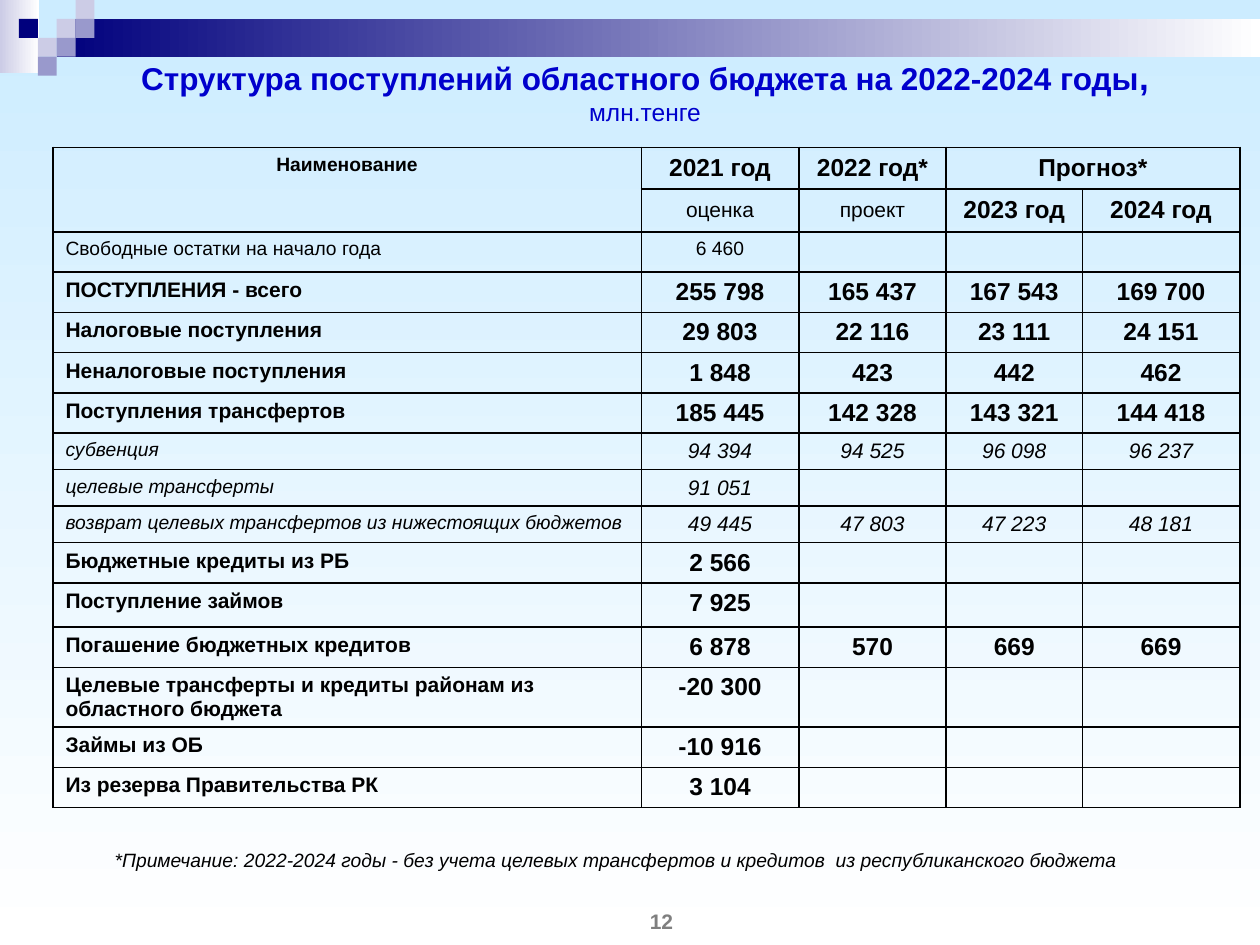
import pptx
import pptx.dml.color
import pptx.enum.shapes
import pptx.enum.text
import pptx.util
from lxml import etree

Inches = pptx.util.Inches
Pt = pptx.util.Pt
RGB = pptx.dml.color.RGBColor
ALIGN = pptx.enum.text.PP_ALIGN
ANCHOR = pptx.enum.text.MSO_ANCHOR

SKY = RGB(0xCC, 0xEC, 0xFF)
WHITE = RGB(0xFF, 0xFF, 0xFF)
BLACK = RGB(0, 0, 0)
GREY = RGB(0x7F, 0x7F, 0x7F)
TITLE_BLUE = RGB(0, 0, 0xCC)
NAVY = RGB(0, 0, 0x7D)
LILAC = RGB(0xCC, 0xCC, 0xE6)
VIOLET = RGB(0x99, 0x99, 0xCC)

FONT = "Arial"
UNIT = 0.15  # side of one decorative square
COLUMNS = [4.67, 1.25, 1.17, 1.08, 1.25]
HEADER_HEIGHTS = [0.33, 0.34]

# row kind: label size, value size, bold, italic, height
KINDS = {
    "plain": (11, 11, False, False, 0.32),
    "total": (12, 14, True, False, 0.32),
    "loan": (12, 14, True, False, 0.35),
    "double": (12, 14, True, False, 0.47),
    "detail": (11, 12, False, True, 0.29),
}
BUDGET = [
    ("plain", "Свободные остатки на начало года", "6 460"),
    ("total", "ПОСТУПЛЕНИЯ - всего", "255 798", "165 437", "167 543", "169 700"),
    ("total", "Налоговые поступления", "29 803", "22 116", "23 111", "24 151"),
    ("total", "Неналоговые поступления", "1 848", "423", "442", "462"),
    ("total", "Поступления трансфертов", "185 445", "142 328", "143 321", "144 418"),
    ("detail", "субвенция", "94 394", "94 525", "96 098", "96 237"),
    ("detail", "целевые трансферты", "91 051"),
    ("detail", "возврат целевых трансфертов из нижестоящих бюджетов",
     "49 445", "47 803", "47 223", "48 181"),
    ("total", "Бюджетные кредиты из РБ", "2 566"),
    ("loan", "Поступление займов", "7 925"),
    ("total", "Погашение бюджетных кредитов", "6 878", "570", "669", "669"),
    ("double", "Целевые трансферты и кредиты районам из областного бюджета", "-20 300"),
    ("total", "Займы из ОБ", "-10 916"),
    ("total", "Из резерва Правительства РК", "3 104"),
]


def write(paragraph, text, size=12, color=BLACK, bold=False, italic=False, align=ALIGN.CENTER):
    paragraph.alignment = align
    run = paragraph.add_run()
    run.text = text
    font = run.font
    font.name, font.size, font.bold, font.italic = FONT, Pt(size), bold, italic
    font.color.rgb = color


def shade(fill, start, end, angle):
    fill.gradient()
    fill.gradient_angle = angle
    for stop, color in zip(fill.gradient_stops, (start, end)):
        stop.color.rgb = color


def add_block(slide, left, top, width, height):
    block = slide.shapes.add_shape(pptx.enum.shapes.MSO_SHAPE.RECTANGLE,
                                   Inches(left), Inches(top), Inches(width), Inches(height))
    block.shadow.inherit = False
    block.line.fill.background()
    return block


def add_ornament(slide):
    shade(add_block(slide, 0, 0, 0.31, 0.58).fill, LILAC, WHITE, 0)
    shade(add_block(slide, 3 * UNIT, UNIT, 10 - 3 * UNIT, 2 * UNIT).fill, NAVY, WHITE, 0)
    squares = {LILAC: [(3, 1), (4, 0), (2, 2)],
               VIOLET: [(4, 1), (3, 2), (2, 3)],
               NAVY: [(1, 1)]}
    for color, places in squares.items():
        for column, row in places:
            square = add_block(slide, column * UNIT, row * UNIT, UNIT, UNIT)
            square.fill.solid()
            square.fill.fore_color.rgb = color


def add_title(slide):
    title = slide.shapes.title
    title.left, title.top, title.width, title.height = map(Inches, (0.58, 0.44, 9.08, 0.56))
    frame = title.text_frame
    frame.auto_size = pptx.enum.text.MSO_AUTO_SIZE.NONE
    frame.vertical_anchor = ANCHOR.MIDDLE
    heading = frame.paragraphs[0]
    write(heading, "Структура поступлений областного бюджета на 2022-2024 годы",
          size=18, color=TITLE_BLUE, bold=True)
    write(heading, ",", size=20, color=TITLE_BLUE, bold=True)
    heading.add_line_break()
    write(heading, "млн.тенге", size=14, color=TITLE_BLUE)


def add_borders(cell):
    properties = cell._tc.get_or_add_tcPr()
    for position, side in enumerate(("lnL", "lnR", "lnT", "lnB")):
        border = etree.fromstring(
            f'<a:{side} xmlns:a="http://schemas.openxmlformats.org/drawingml/2006/main" w="12700">'
            f'<a:solidFill><a:srgbClr val="{BLACK}"/></a:solidFill></a:{side}>')
        properties.insert(position, border)


def fill_cell(cell, text, size, anchor=ANCHOR.TOP, **style):
    cell.vertical_anchor = anchor
    paragraph = cell.text_frame.paragraphs[0]
    if text:
        write(paragraph, text, size=size, **style)
    else:  # keeps an empty cell from stretching its row
        end = etree.SubElement(paragraph._p, pptx.oxml.ns.qn("a:endParaRPr"))
        end.set("sz", str(size * 100))


def add_header(table):
    years = ["2021 год", "2022 год*", "Прогноз*"]
    stages = [("оценка", 12, False), ("проект", 12, False),
              ("2023 год", 14, True), ("2024 год", 14, True)]
    fill_cell(table.cell(0, 0), "Наименование", 11, bold=True)
    for column, year in enumerate(years, 1):
        fill_cell(table.cell(0, column), year, 14, bold=True)
    for column, (stage, size, bold) in enumerate(stages, 1):
        fill_cell(table.cell(1, column), stage, size, ANCHOR.MIDDLE, bold=bold)
    table.cell(0, 0).merge(table.cell(1, 0))
    table.cell(0, 3).merge(table.cell(0, 4))


def add_budget_table(slide):
    heights = HEADER_HEIGHTS + [KINDS[entry[0]][-1] for entry in BUDGET]
    table = slide.shapes.add_table(len(heights), len(COLUMNS), Inches(0.42), Inches(1.17),
                                   Inches(sum(COLUMNS)), Inches(sum(heights))).table
    table.first_row = table.horz_banding = False
    for column, width in zip(table.columns, COLUMNS):
        column.width = Inches(width)
    for row, height in zip(table.rows, heights):
        row.height = Inches(height)
    for cell in table.iter_cells():
        cell.fill.background()
        add_borders(cell)
    add_header(table)
    for row, (kind, label, *values) in enumerate(BUDGET, len(HEADER_HEIGHTS)):
        label_size, value_size, bold, italic, _ = KINDS[kind]
        fill_cell(table.cell(row, 0), label, label_size,
                  bold=bold, italic=italic, align=ALIGN.LEFT)
        for column in range(1, len(COLUMNS)):
            value = values[column - 1] if column <= len(values) else ""
            fill_cell(table.cell(row, column), value, value_size if value else 11,
                      bold=bold, italic=italic)


def add_caption(slide, box, text, **style):
    frame = slide.shapes.add_textbox(*map(Inches, box)).text_frame
    frame.word_wrap = True
    frame.vertical_anchor = ANCHOR.MIDDLE
    frame.margin_left = frame.margin_right = frame.margin_top = frame.margin_bottom = 0
    write(frame.paragraphs[0], text, **style)


def main():
    deck = pptx.Presentation()
    deck.slide_width, deck.slide_height = Inches(10), Inches(7.5)
    slide = deck.slides.add_slide(deck.slide_layouts[5])
    shade(slide.background.fill, SKY, WHITE, 270)
    add_ornament(slide)
    add_title(slide)
    add_budget_table(slide)
    add_caption(slide, (0.91, 6.73, 8.34, 0.18),
                "*Примечание: 2022-2024 годы - без учета целевых трансфертов и кредитов "
                " из республиканского бюджета", size=11, italic=True, align=ALIGN.LEFT)
    add_caption(slide, (4.25, 7.19, 2, 0.24), "12", color=GREY, bold=True)
    deck.save("out.pptx")


if __name__ == "__main__":
    main()
